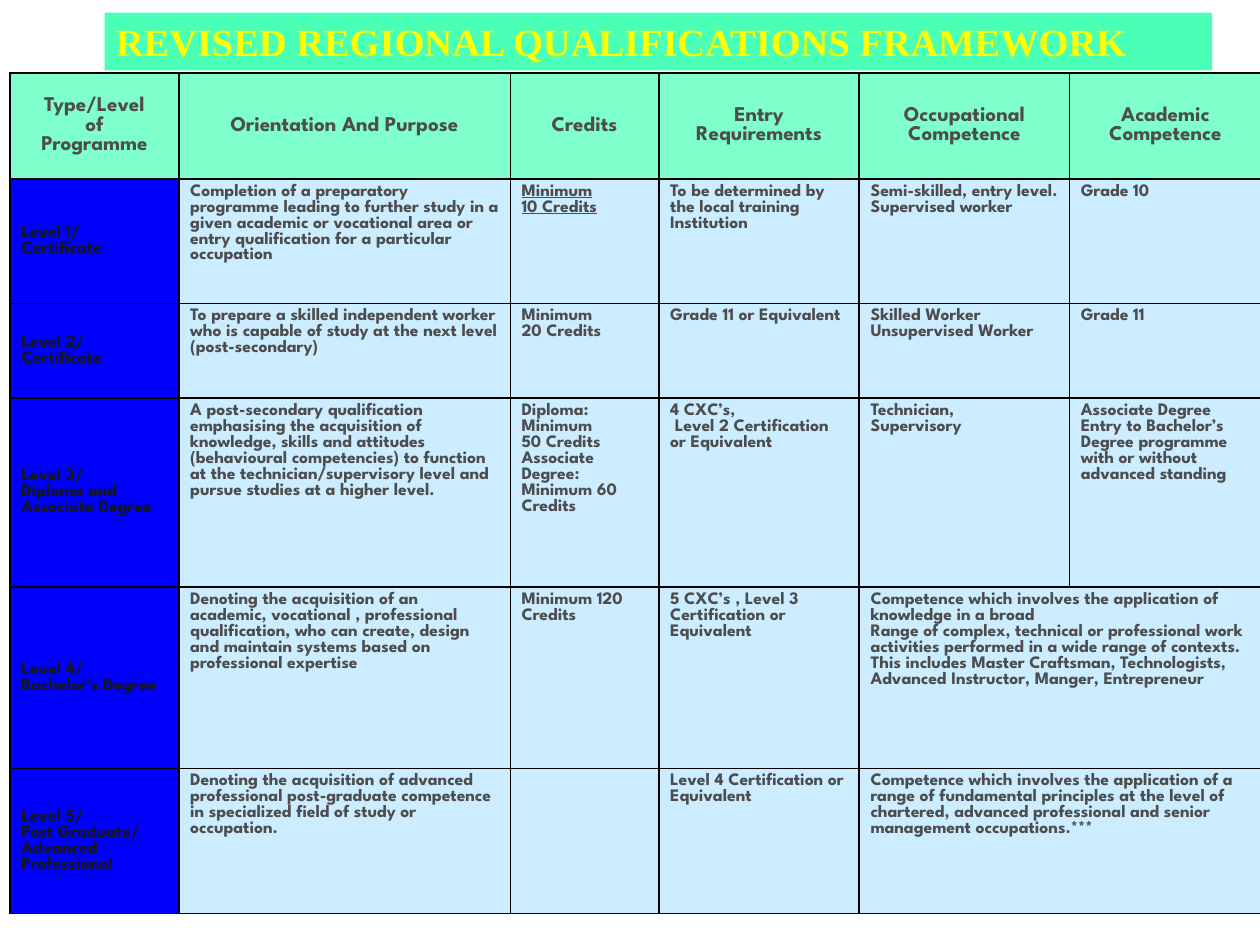
from lxml import etree
from pptx import Presentation
from pptx.dml.color import RGBColor
from pptx.enum.text import MSO_ANCHOR, PP_ALIGN
from pptx.oxml import parse_xml
from pptx.oxml.ns import nsdecls, qn
from pptx.util import Inches, Pt

MIDDLE, TOP = MSO_ANCHOR.MIDDLE, MSO_ANCHOR.TOP
CENTER, LEFT = PP_ALIGN.CENTER, PP_ALIGN.LEFT

GREEN = RGBColor(0x00, 0xFF, 0x99)
YELLOW = RGBColor(0xFF, 0xFF, 0x00)
BLUE = RGBColor(0x00, 0x00, 0xFF)
PALE_BLUE = RGBColor(0xCC, 0xEC, 0xFF)
GRAY = RGBColor(0x4D, 0x4D, 0x4D)
NEAR_BLACK = RGBColor(0x16, 0x16, 0x16)

TITLE_FONT, TABLE_FONT = "Times New Roman", "League Spartan"
COLUMN_WIDTHS = [1.34, 2.63, 1.18, 1.59, 1.67, 1.52]
ROW_HEIGHTS = [0.84, 0.99, 0.75, 1.5, 1.44, 1.15]

HEADINGS = ["Type/Level\nof\nProgramme", "Orientation And Purpose", "Credits",
            "Entry Requirements", "Occupational Competence", "Academic Competence"]

# A level with five entries has one competence that covers the last two columns.
LEVELS = [
    ["Level 1/\nCertificate",
     "Completion of a preparatory programme leading to further study in a given "
     "academic or vocational area or entry qualification for a particular occupation",
     "Minimum\n10 Credits",
     "To be determined by the local training\nInstitution",
     "Semi-skilled, entry level.\nSupervised worker",
     "Grade 10"],
    ["Level 2/\nCertificate",
     "To prepare a skilled independent worker who is capable of study at the next "
     "level (post-secondary)",
     "Minimum\n20 Credits",
     "Grade 11 or Equivalent",
     "Skilled Worker\nUnsupervised Worker",
     "Grade 11"],
    ["Level 3/\nDiploma and\nAssociate Degree",
     "A post-secondary qualification emphasising the acquisition of knowledge, skills "
     "and attitudes (behavioural competencies) to function at the "
     "technician/supervisory level and pursue studies at a higher level.",
     "Diploma: Minimum\n50 Credits\nAssociate Degree:\nMinimum 60 Credits",
     "4 CXC’s,\n Level 2 Certification\nor Equivalent",
     "Technician,\nSupervisory",
     "Associate Degree\nEntry to Bachelor’s Degree programme with or without "
     "advanced standing"],
    ["Level 4/\nBachelor’s Degree",
     "Denoting the acquisition of an\nacademic, vocational , professional "
     "qualification, who can create, design and maintain systems based on "
     "professional expertise",
     "Minimum 120 Credits",
     "5 CXC’s , Level 3 Certification or Equivalent",
     "Competence which involves the application of knowledge in a broad\n"
     "Range of complex, technical or professional work activities performed in a wide "
     "range of contexts. This includes Master Craftsman, Technologists, "
     "Advanced Instructor, Manger, Entrepreneur"],
    ["Level 5/\nPost Graduate/\nAdvanced Professional",
     "Denoting the acquisition of advanced professional post-graduate competence in "
     "specialized field of study or occupation.",
     "",
     "Level 4 Certification or Equivalent",
     "Competence which involves the application of a range of fundamental principles "
     "at the level of chartered, advanced professional and senior management "
     "occupations.***"],
]


def set_opacity(properties, percent):
    color = properties.find(qn("a:solidFill")).find(qn("a:srgbClr"))
    etree.SubElement(color, qn("a:alpha"), val=str(percent * 1000))


def set_insets(holder):
    holder.margin_left = holder.margin_right = Inches(0.09)
    holder.margin_top = holder.margin_bottom = Inches(0.04)


def set_font(para, name, size, color):
    para.font.name = name
    para.font.size = Pt(size)
    para.font.bold = True
    para.font.color.rgb = color


def add_borders(cell):
    """Draw a thin black line on each side; the lines go before the cell's fill."""
    properties = cell._tc.get_or_add_tcPr()
    for position, side in enumerate(("lnL", "lnR", "lnT", "lnB")):
        properties.insert(position, parse_xml(
            f'<a:{side} {nsdecls("a")} w="12700"><a:solidFill>'
            f'<a:srgbClr val="000000"/></a:solidFill></a:{side}>'))


def style_cell(cell, text, fill, color, size=10, anchor=TOP, align=LEFT):
    cell.text = text
    cell.vertical_anchor = anchor
    set_insets(cell)
    cell.fill.solid()
    cell.fill.fore_color.rgb = fill
    add_borders(cell)
    for para in cell.text_frame.paragraphs:
        para.alignment = align
        set_font(para, TABLE_FONT, size, color)


def add_title(page, left, top, width, height):
    box = page.shapes.add_textbox(left, top, width, height)
    box.fill.solid()
    box.fill.fore_color.rgb = GREEN
    set_opacity(box._element.spPr, 71)
    frame = box.text_frame
    frame.word_wrap = True
    frame.vertical_anchor = MIDDLE
    set_insets(frame)
    frame.text = "REVISED REGIONAL QUALIFICATIONS FRAMEWORK"
    set_font(frame.paragraphs[0], TITLE_FONT, 22, YELLOW)


def add_framework_table(page, left, top, width, height):
    table = page.shapes.add_table(len(ROW_HEIGHTS), len(COLUMN_WIDTHS),
                                  left, top, width, height).table
    table.first_row = table.horz_banding = False
    for column, column_width in zip(table.columns, COLUMN_WIDTHS):
        column.width = Inches(column_width)
    for row, row_height in zip(table.rows, ROW_HEIGHTS):
        row.height = Inches(row_height)

    for index, heading in enumerate(HEADINGS):
        cell = table.cell(0, index)
        style_cell(cell, heading, GREEN, GRAY, 12, MIDDLE, CENTER)
        set_opacity(cell._tc.tcPr, 50)

    last = len(HEADINGS) - 1
    for number, (level, *details) in enumerate(LEVELS, start=1):
        style_cell(table.cell(number, 0), level, BLUE, NEAR_BLACK, anchor=MIDDLE)
        for index, detail in enumerate(details, start=1):
            style_cell(table.cell(number, index), detail, PALE_BLUE, GRAY)
        if len(details) < last:
            style_cell(table.cell(number, last), "", PALE_BLUE, GRAY)
            table.cell(number, last - 1).merge(table.cell(number, last))

    for para in table.cell(1, 2).text_frame.paragraphs:
        para.font.underline = True


def main():
    deck = Presentation()
    deck.slide_width, deck.slide_height = Inches(10), Inches(7.5)
    page = deck.slides.add_slide(deck.slide_layouts[6])
    add_title(page, Inches(0.83), Inches(0.1), Inches(8.79), Inches(0.46))
    add_framework_table(page, Inches(0.08), Inches(0.58), Inches(9.92), Inches(6.67))
    deck.save("out.pptx")


if __name__ == "__main__":
    main()
